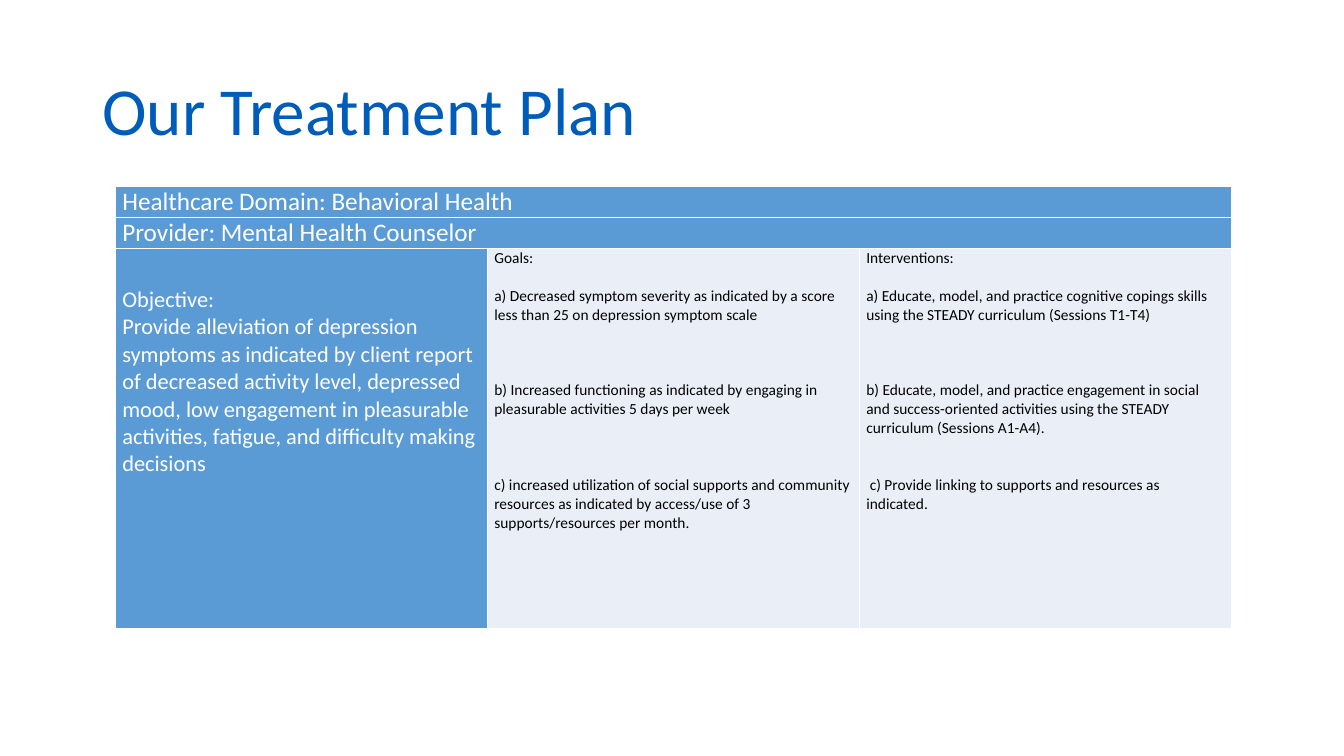
"""Build the treatment plan slide: a title above a three-column plan table."""
from lxml.etree import SubElement
from pptx import Presentation
from pptx.dml.color import RGBColor
from pptx.enum.text import MSO_ANCHOR, PP_ALIGN
from pptx.oxml.ns import qn
from pptx.util import Pt

TITLE = "Our Treatment Plan"
BANNERS = ["Healthcare Domain: Behavioral Health", "Provider: Mental Health Counselor"]

# Each entry: text, blank lines above it, first-line indent in points
OBJECTIVE = [
    ("Objective:", 2, 0),
    ("Provide alleviation of depression symptoms as indicated by client report of decreased "
     "activity level, depressed mood, low engagement in pleasurable activities, fatigue, and "
     "difficulty making decisions", 0, 0),
]
GOALS = [
    ("Goals:", 0, 0),
    ("a) Decreased symptom severity as indicated by a score less than 25 on depression "
     "symptom scale", 1, 0),
    ("b) Increased functioning as indicated by engaging in pleasurable activities 5 days "
     "per week", 3, 0),
    ("c) increased utilization of social supports and community resources as indicated by "
     "access/use of 3 supports/resources per month.", 3, 0),
]
INTERVENTIONS = [
    ("Interventions:", 0, 0),
    ("a) Educate, model, and practice cognitive copings skills using the STEADY curriculum "
     "(Sessions T1-T4)", 1, 0),
    ("b) Educate, model, and practice engagement in social and success-oriented activities "
     "using the STEADY curriculum (Sessions A1-A4).", 3, 0),
    ("c) Provide linking to supports and resources as indicated.", 2, 2.5),
]

THEME = {
    "font": "Calibri", "title": "005CB9", "head": "5B9BD5", "body": "EAEFF7",
    "light": "FFFFFF", "dark": "000000",
    "title_size": 48, "banner_size": 18, "objective_size": 16, "detail_size": 11,
}
SLIDE_W, SLIDE_H = 960, 540
LEFT, TOP, COL_W = 82.4, 133.4, 265.7
ROWS = [22, 22, 271.5]
LINE = 13.5


def add_run(p, text, size, color):
    r = p.add_run()
    r.text = text
    r.font.name = THEME["font"]
    r.font.size = Pt(size)
    r.font.color.rgb = RGBColor.from_string(THEME[color])


def add_borders(cell):
    tc_pr = cell._tc.get_or_add_tcPr()
    for i, side in enumerate(("lnL", "lnR", "lnT", "lnB")):
        ln = tc_pr.makeelement(qn(f"a:{side}"), {"w": str(Pt(1))})
        fill = SubElement(ln, qn("a:solidFill"))
        SubElement(fill, qn("a:srgbClr"), val=THEME["light"])
        tc_pr.insert(i, ln)


def fill_cell(cell, items, size, color, fill):
    cell.fill.solid()
    cell.fill.fore_color.rgb = RGBColor.from_string(THEME[fill])
    cell.margin_left = cell.margin_right = Pt(5)
    cell.margin_top, cell.margin_bottom = Pt(items[0][1] * LINE), Pt(0)
    tf = cell.text_frame
    for i, (text, gap, indent) in enumerate(items):
        p = tf.add_paragraph() if i else tf.paragraphs[0]
        if i and gap:
            p.space_before = Pt(gap * LINE)
        if indent:
            p._p.get_or_add_pPr().set("indent", str(Pt(indent)))
        add_run(p, text, size, color)


def add_title(s):
    title = s.shapes.title
    title.left, title.top, title.width, title.height = Pt(66), Pt(28.75), Pt(828), Pt(104.4)
    tf = title.text_frame
    tf.word_wrap = True
    tf.vertical_anchor = MSO_ANCHOR.MIDDLE
    p = tf.paragraphs[0]
    p.alignment = PP_ALIGN.LEFT
    p.line_spacing = 0.9
    add_run(p, TITLE, THEME["title_size"], "title")


def add_plan(s):
    table = s.shapes.add_table(len(ROWS), 3, Pt(LEFT), Pt(TOP), Pt(3 * COL_W), Pt(sum(ROWS))).table
    table.first_row = table.horz_banding = False
    for col in table.columns:
        col.width = Pt(COL_W)
    for row, height in zip(table.rows, ROWS):
        row.height = Pt(height)
    for i, text in enumerate(BANNERS):
        table.cell(i, 0).merge(table.cell(i, 2))
        fill_cell(table.cell(i, 0), [(text, 0, 0)], THEME["banner_size"], "light", "head")
    details = [
        (OBJECTIVE, THEME["objective_size"], "light", "head"),
        (GOALS, THEME["detail_size"], "dark", "body"),
        (INTERVENTIONS, THEME["detail_size"], "dark", "body"),
    ]
    for i, detail in enumerate(details):
        fill_cell(table.cell(len(BANNERS), i), *detail)
    for cell in table.iter_cells():
        add_borders(cell)


def main():
    prs = Presentation()
    prs.slide_width, prs.slide_height = Pt(SLIDE_W), Pt(SLIDE_H)
    s = prs.slides.add_slide(prs.slide_layouts[5])
    add_title(s)
    add_plan(s)
    prs.save("out.pptx")


if __name__ == "__main__":
    main()
